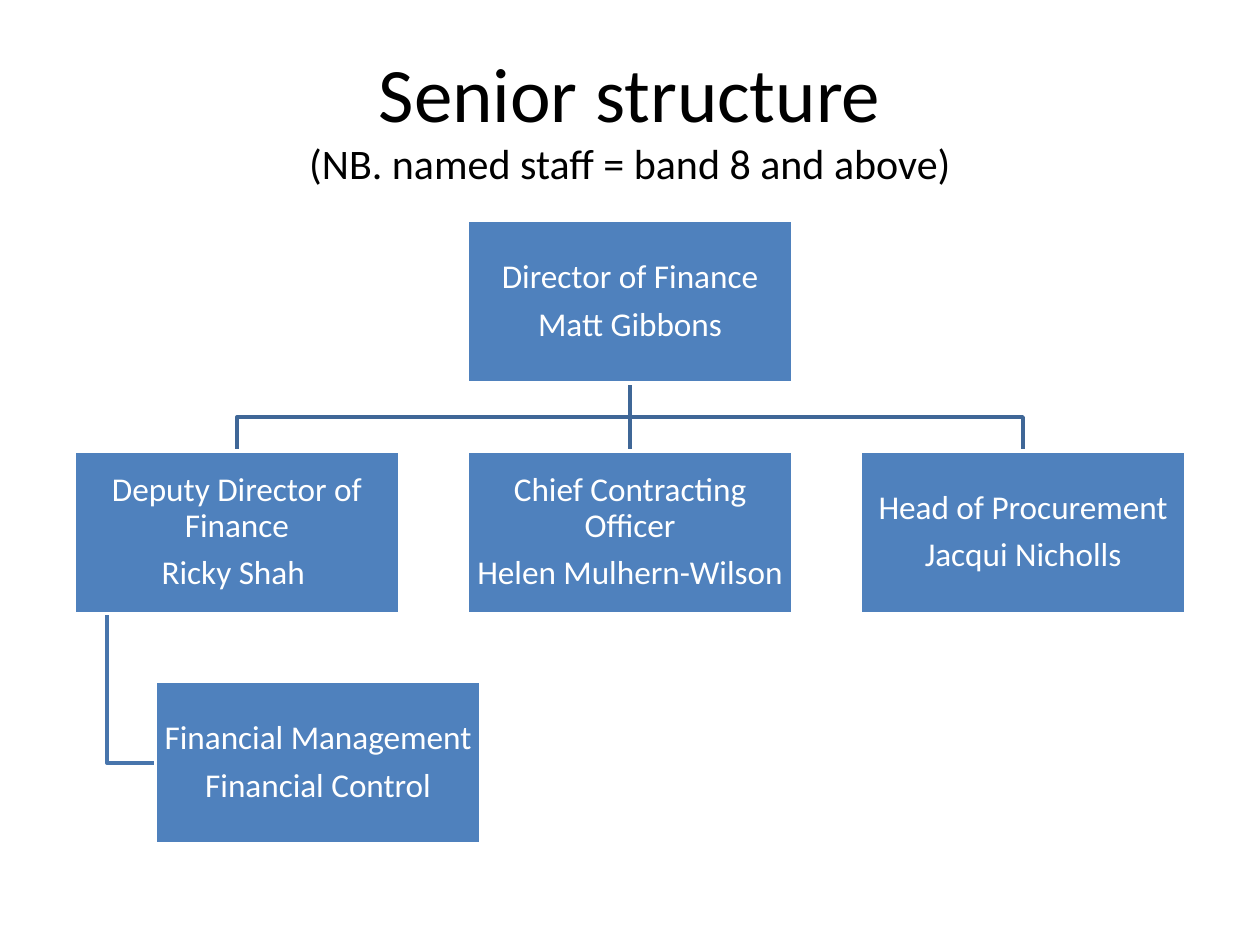
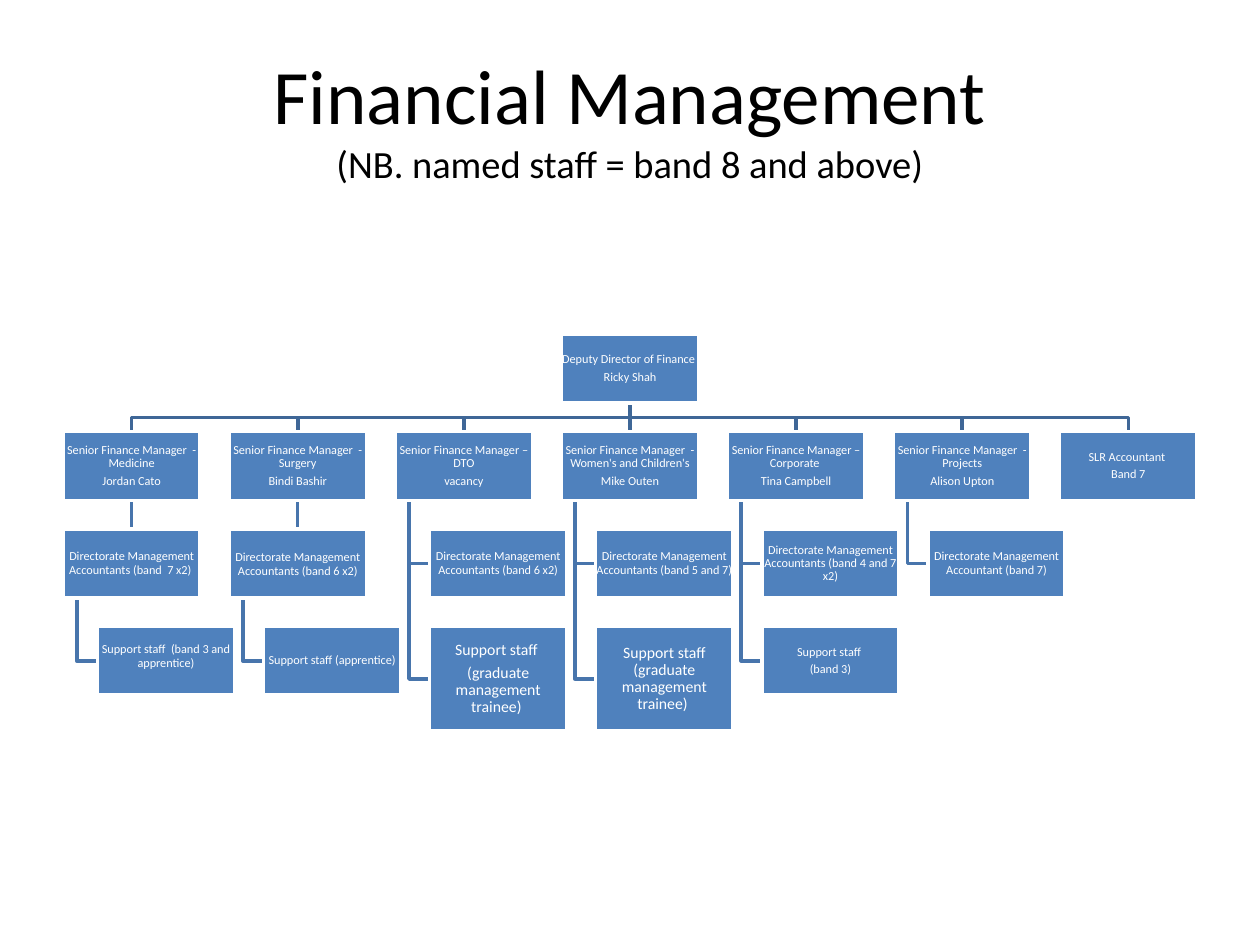
import pptx
import pptx.dml.color
import pptx.enum.shapes
import pptx.enum.text
import pptx.oxml.ns
import pptx.util
import lxml.etree

Pt = pptx.util.Pt
RGB = pptx.dml.color.RGBColor
CENTER = pptx.enum.text.PP_ALIGN.CENTER
MIDDLE = pptx.enum.text.MSO_ANCHOR.MIDDLE

THEME = {
    "font": "Calibri",
    "title_color": RGB.from_string("000000"),
    "box_fill": RGB.from_string("4F81BD"),
    "box_text": RGB.from_string("FFFFFF"),
    "box_line": RGB.from_string("FFFFFF"),
    "top_connector": RGB.from_string("3F6797"),
    "lower_connector": RGB.from_string("4875AC"),
    "line_width": Pt(2),
    "title_size": 44,
    "box_size": 19,
    "small_box_size": 7,
    "trainee_size": 9,
}
SLIDE_WIDTH, SLIDE_HEIGHT = 720, 540
NOTE = "(NB. named staff = band 8 and above)"

# Proportions of every chart, as shares of the box width
GAP, HEIGHT, TRUNK, INDENT = 0.21, 0.5, 0.1, 0.25

# Formats of single boxes that differ from the rest of their chart
USUAL = {}
TRAINEE = {"size": THEME["trainee_size"], "height": 59.8}
SINGLE_SPACED = {"line_spacing": 1.0}
RAISED = {"line_spacing": 1.0, "margin_bottom": 6.3}

# Branch: head lines, whether the first report stands straight below, reports
CHARTS = [
    {
        "title": "Senior structure",
        "note_size": 24,
        "top": 126,
        "box_width": 185.63,
        "text_size": THEME["box_size"],
        "director": ["Director of Finance", "Matt Gibbons"],
        "branches": [
            (["Deputy Director of Finance", "Ricky Shah "], False,
             [(["Financial Management", "Financial Control"], USUAL)]),
            (["Chief Contracting Officer", "Helen Mulhern-Wilson"], False, []),
            (["Head of Procurement", "Jacqui Nicholls"], False, []),
        ],
    },
    {
        "title": "Financial Management",
        "note_size": 22,
        "top": 191,
        "box_width": 78.45,
        "text_size": THEME["small_box_size"],
        "director": ["Deputy Director of Finance ", "Ricky Shah"],
        "branches": [
            (["Senior Finance Manager  - Medicine", "Jordan Cato"], True,
             [(["Directorate Management Accountants (band  7 x2) "], USUAL),
              (["Support staff  (band 3 and apprentice)"], RAISED)]),
            (["Senior Finance Manager  - Surgery", "Bindi Bashir"], True,
             [(["Directorate Management Accountants (band 6 x2)"], SINGLE_SPACED),
              (["Support staff (apprentice)"], USUAL)]),
            (["Senior Finance Manager – DTO", "vacancy"], False,
             [(["Directorate Management Accountants (band 6 x2)"], USUAL),
              (["Support staff ", "(graduate management trainee) "], TRAINEE)]),
            (["Senior Finance Manager  - Women's and Children's", "Mike Outen"], False,
             [(["Directorate Management Accountants (band 5 and 7)"], USUAL),
              (["Support staff (graduate management trainee) "], TRAINEE)]),
            (["Senior Finance Manager – Corporate ", "Tina Campbell"], False,
             [(["Directorate Management Accountants (band 4 and 7 x2)"], USUAL),
              (["Support staff ", "(band 3)"], USUAL)]),
            (["Senior Finance Manager  - Projects", "Alison Upton"], False,
             [(["Directorate Management Accountant (band 7)"], USUAL)]),
            (["SLR Accountant ", "Band 7"], False, []),
        ],
    },
]


def add_box(slide, left, top, width, lines, box_format):
    shape = slide.shapes.add_shape(
        pptx.enum.shapes.MSO_SHAPE.RECTANGLE,
        Pt(left), Pt(top), Pt(width), Pt(box_format["height"]))
    shape.shadow.inherit = False
    shape.fill.solid()
    shape.fill.fore_color.rgb = THEME["box_fill"]
    shape.line.color.rgb = THEME["box_line"]
    shape.line.width = THEME["line_width"]
    frame = shape.text_frame
    frame_format = {
        "word_wrap": True, "vertical_anchor": MIDDLE,
        "margin_left": 0, "margin_right": 0, "margin_top": 0,
        "margin_bottom": Pt(box_format["margin_bottom"]),
    }
    for name, value in frame_format.items():
        setattr(frame, name, value)
    for index, line in enumerate(lines):
        paragraph = frame.paragraphs[0] if index == 0 else frame.add_paragraph()
        paragraph.alignment = CENTER
        paragraph.line_spacing = box_format["line_spacing"]
        is_last = index == len(lines) - 1
        paragraph.space_after = Pt(0 if is_last else 0.35 * box_format["size"])
        run = paragraph.add_run()
        run.text = line
        font_format = {"name": THEME["font"], "size": Pt(box_format["size"])}
        for name, value in font_format.items():
            setattr(run.font, name, value)
        run.font.color.rgb = THEME["box_text"]


def add_route(slide, points, color):
    """Draw a straight connector for two points and an open outline for more."""
    corners = [(Pt(x), Pt(y)) for x, y in points]
    if len(corners) == 2:
        line_shape = slide.shapes.add_connector(
            pptx.enum.shapes.MSO_CONNECTOR.STRAIGHT, *corners[0], *corners[1])
        lxml.etree.SubElement(
            line_shape._element.spPr, pptx.oxml.ns.qn("a:effectLst"))
    else:
        builder = slide.shapes.build_freeform(*corners[0])
        builder.add_line_segments(corners[1:], close=False)
        line_shape = builder.convert_to_shape()
        line_shape.shadow.inherit = False
        line_shape.fill.background()
    line_shape.line.color.rgb = color
    line_shape.line.width = THEME["line_width"]


presentation = pptx.Presentation()
presentation.slide_width = Pt(SLIDE_WIDTH)
presentation.slide_height = Pt(SLIDE_HEIGHT)

for chart in CHARTS:
    slide = presentation.slides.add_slide(presentation.slide_layouts[6])

    title = slide.shapes.add_textbox(Pt(36), Pt(21.6), Pt(648), Pt(90))
    title.text_frame.word_wrap = True
    title.text_frame.vertical_anchor = MIDDLE
    paragraph = title.text_frame.paragraphs[0]
    paragraph.alignment = CENTER
    for text, size in [(chart["title"], THEME["title_size"]), (NOTE, chart["note_size"])]:
        if paragraph.runs:
            paragraph.add_line_break()
        run = paragraph.add_run()
        run.text = text
        for name, value in {"name": THEME["font"], "size": Pt(size)}.items():
            setattr(run.font, name, value)
        run.font.color.rgb = THEME["title_color"]

    width = chart["box_width"]
    height = width * HEIGHT
    gap = width * GAP
    level_tops = [chart["top"] + level * (height + gap) for level in range(4)]
    count = len(chart["branches"])
    row_left = (SLIDE_WIDTH - count * width - (count - 1) * gap) / 2
    center = SLIDE_WIDTH / 2
    usual_format = {
        "size": chart["text_size"], "height": height,
        "line_spacing": 0.9, "margin_bottom": 0,
    }

    # Lay out boxes and routes first, so that the routes can lie behind
    boxes = [(center - width / 2, level_tops[0], chart["director"], USUAL)]
    routes = []
    for column, (head, first_below, reports) in enumerate(chart["branches"]):
        left = row_left + column * (width + gap)
        middle = left + width / 2
        boxes.append((left, level_tops[1], head, USUAL))
        start, end = level_tops[0] + height, level_tops[1]
        bend = (start + end) / 2
        if abs(middle - center) < 1:
            points = [(center, start), (center, end)]
        else:
            points = [(center, start), (center, bend), (middle, bend), (middle, end)]
        routes.append((points, THEME["top_connector"]))

        parent_bottom = level_tops[1] + height
        for level, (lines, changes) in enumerate(reports, start=2):
            top = level_tops[level]
            if first_below and level == 2:
                boxes.append((left, top, lines, changes))
                points = [(middle, parent_bottom), (middle, top)]
                parent_bottom = top + height
            else:
                report_left = left + width * INDENT
                trunk = left + width * TRUNK
                report_middle = top + changes.get("height", height) / 2
                boxes.append((report_left, top, lines, changes))
                points = [(trunk, parent_bottom), (trunk, report_middle),
                          (report_left, report_middle)]
            routes.append((points, THEME["lower_connector"]))

    for points, color in routes:
        add_route(slide, points, color)
    for left, top, lines, changes in boxes:
        add_box(slide, left, top, width, lines, {**usual_format, **changes})

presentation.save("out.pptx")
